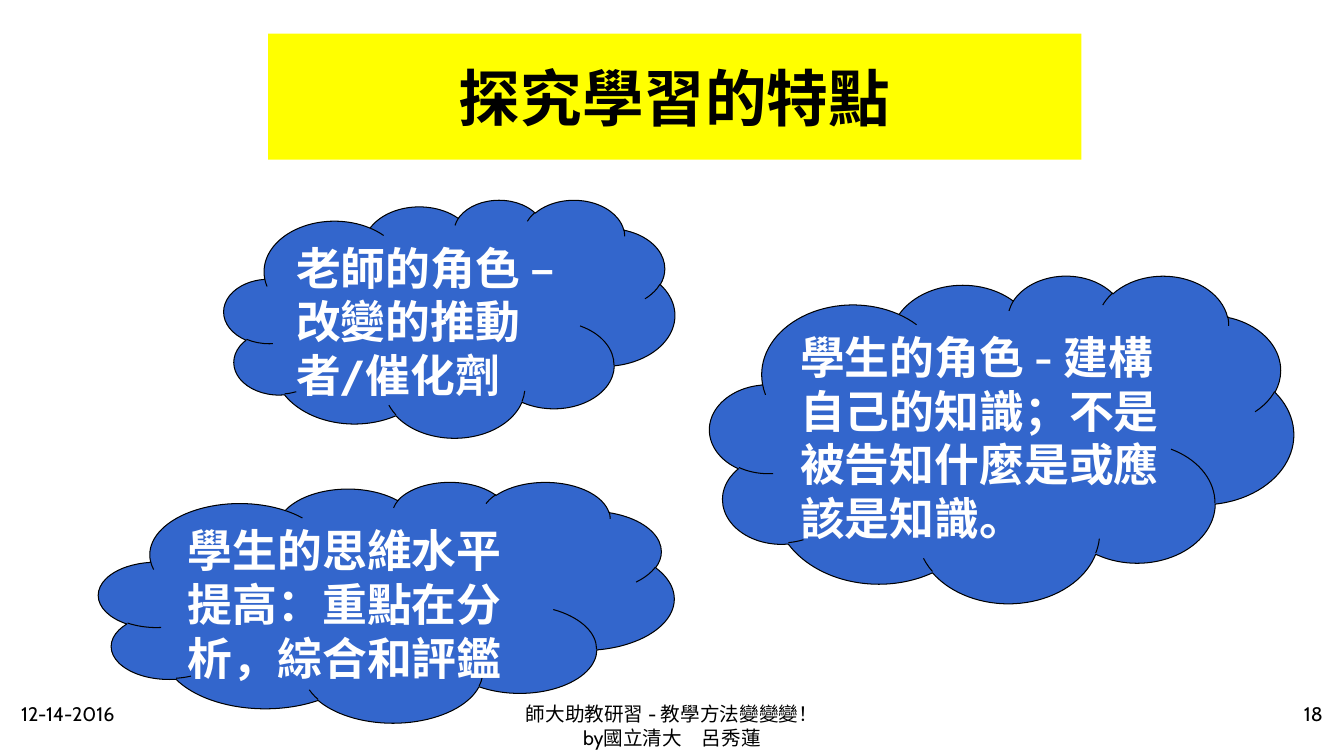
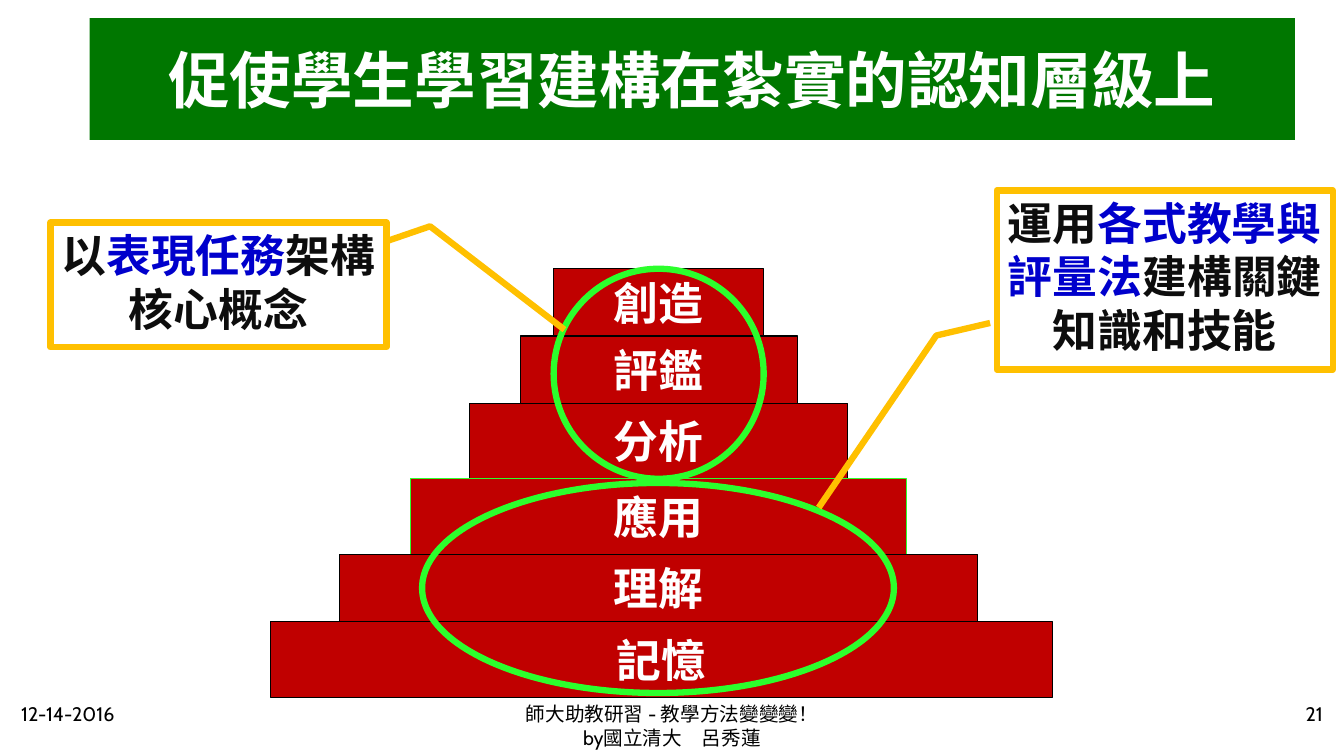
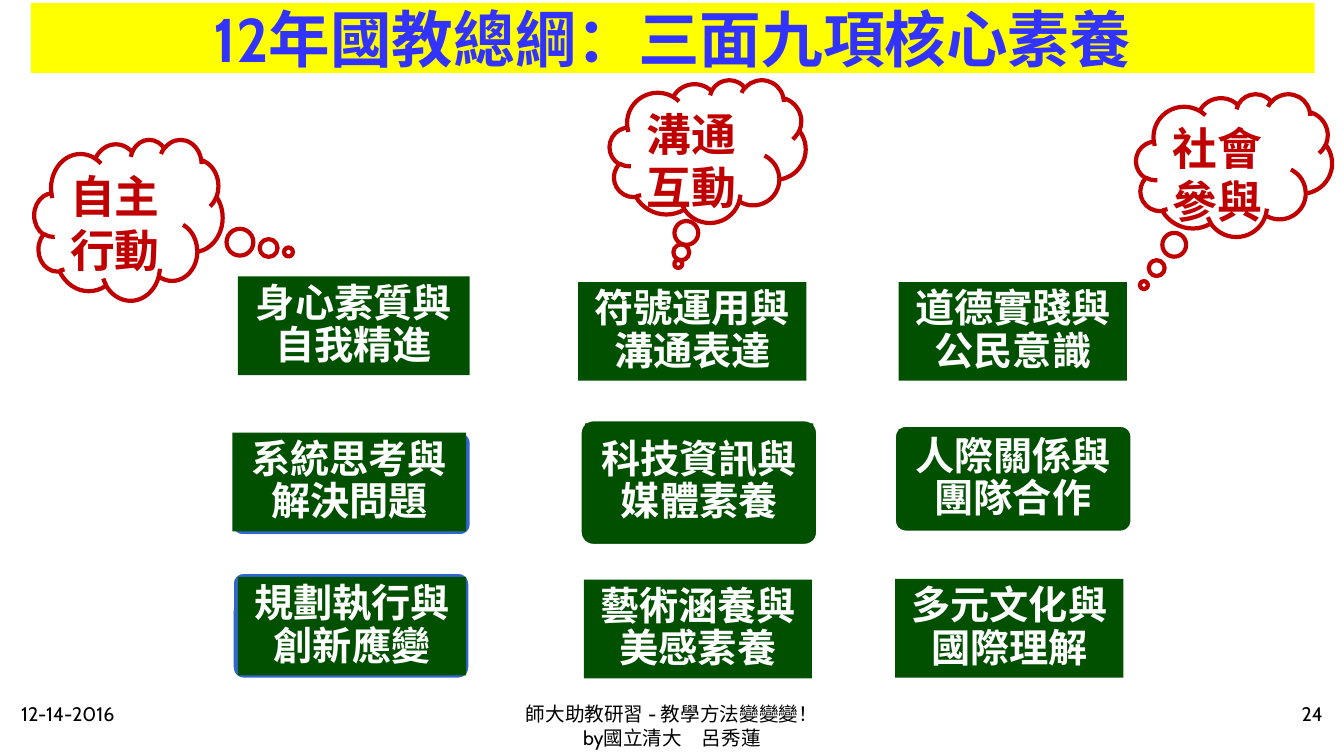
from lxml import etree
from pptx import Presentation
from pptx.dml.color import RGBColor
from pptx.enum.shapes import MSO_SHAPE
from pptx.enum.text import MSO_ANCHOR, MSO_AUTO_SIZE, PP_ALIGN
from pptx.oxml.ns import qn
from pptx.util import Pt

BLACK = RGBColor(0, 0, 0)
INK = RGBColor(0x0D, 0x0D, 0x0D)
WHITE = RGBColor(0xFF, 0xFF, 0xFF)
YELLOW = RGBColor(0xFF, 0xFF, 0x00)
GREEN = RGBColor(0x00, 0x77, 0x00)
DARK_GREEN = RGBColor(0x00, 0x50, 0x00)
LIME = RGBColor(0x2C, 0xFF, 0x2C)
BLUE = RGBColor(0x33, 0x66, 0xCC)
TITLE_BLUE = RGBColor(0x33, 0x33, 0xFF)
KEY_BLUE = RGBColor(0x00, 0x00, 0xCC)
RED = RGBColor(0xC0, 0x00, 0x00)
GOLD = RGBColor(0xFF, 0xC0, 0x00)

LATIN, CJK = "Cabin", "Noto Sans CJK TC"
LEFT, CENTER, RIGHT = PP_ALIGN.LEFT, PP_ALIGN.CENTER, PP_ALIGN.RIGHT
TOP, MIDDLE = MSO_ANCHOR.TOP, MSO_ANCHOR.MIDDLE


def points(box):
    return [Pt(v) for v in box]


def write(sp, *paragraphs, size=32, color=WHITE, bold=True, font=LATIN, align=CENTER,
          anchor=TOP, wrap=True, inset=None, spacing=None, first_indent=None):
    """Fill a shape; a paragraph is a string or a list of (text, colour) runs."""
    tf = sp.text_frame
    tf.auto_size = MSO_AUTO_SIZE.NONE
    tf.word_wrap = wrap
    tf.vertical_anchor = anchor
    if inset is not None:
        tf.margin_left = tf.margin_top = tf.margin_right = tf.margin_bottom = Pt(inset)
    for i, runs in enumerate(paragraphs):
        p = tf.add_paragraph() if i else tf.paragraphs[0]
        p.alignment = align
        if spacing:
            p.line_spacing = spacing
        if first_indent and i == 0:
            pPr = p._p.get_or_add_pPr()
            pPr.set("marL", "0")
            pPr.set("indent", str(Pt(first_indent)))
        for text, run_color in [(runs, color)] if isinstance(runs, str) else runs:
            r = p.add_run()
            r.text = text
            r.font.size, r.font.bold, r.font.name = Pt(size), bold, font
            r.font.color.rgb = run_color
            etree.SubElement(r.font._element, qn("a:ea")).set("typeface", CJK)


def add_shape(s, kind, box, fill=None, line=None, width=0.75, adj=()):
    sp = s.shapes.add_shape(kind, *points(box))
    sp.shadow.inherit = False
    if fill is None:
        sp.fill.background()
    else:
        sp.fill.solid()
        sp.fill.fore_color.rgb = fill
    if line is None:
        sp.line.fill.background()
    else:
        sp.line.color.rgb = line
        sp.line.width = Pt(width)
    for i, value in enumerate(adj):
        sp.adjustments[i] = value
    return sp


def add_footer(s, number):
    parts = [
        (8, 200, LEFT, ["12-14-2016"], None),
        (328, 304, CENTER, ["師大助教研習 - 教學方法變變變！", "by國立清大　呂秀蓮"], -57),
        (752, 200, RIGHT, [str(number)], None),
    ]
    for x, w, align, lines, indent in parts:
        tb = s.shapes.add_textbox(*points((x, 498, w, 36)))
        write(tb, *lines, size=14, color=BLACK, bold=False, align=align, first_indent=indent)


def new_slide(prs, title, box, fill, color, number, font=LATIN):
    s = prs.slides.add_slide(prs.slide_layouts[5])
    sp = s.shapes.title
    sp.left, sp.top, sp.width, sp.height = points(box)
    sp.fill.solid()
    sp.fill.fore_color.rgb = fill
    write(sp, title, size=44, color=color, font=font, anchor=MIDDLE)
    add_footer(s, number)
    return s


def add_cloud(s, box, text):
    sp = add_shape(s, MSO_SHAPE.CLOUD, box, BLUE, BLACK)
    write(sp, text, align=LEFT)


def add_pyramid(s, center, top, levels):
    """Stack centred steps downwards; a level is label, width, height, shift, outline."""
    for label, w, h, shift, line in levels:
        box = (center - w / 2 + shift, top, w, h)
        sp = add_shape(s, MSO_SHAPE.RECTANGLE, box, RED, line)
        write(sp, label, font="Calibri", anchor=MIDDLE, wrap=False)
        top += h


def add_callout(s, box, adj, before, key, after):
    sp = add_shape(s, MSO_SHAPE.LINE_CALLOUT_2, box, WHITE, GOLD, 4.5, adj)
    write(sp, [(before, INK), (key, KEY_BLUE), (after, INK)])


def add_card(s, box, text, frame=None, pads=()):
    """Draw a competency card, with a rounded frame that sticks out by pads (l, t, r, b)."""
    if frame is not None:
        x, y, w, h = box
        l, t, r, b = pads
        add_shape(s, MSO_SHAPE.ROUNDED_RECTANGLE, (x - l, y - t, w + l + r, h + t + b),
                  frame, WHITE, 1, [0.1])
    sp = add_shape(s, MSO_SHAPE.RECTANGLE, box, DARK_GREEN)
    write(sp, text, size=28, anchor=MIDDLE, inset=4.3, spacing=0.9)


def add_dimension(s, thought, box, adj, cards):
    for card in cards:
        add_card(s, *card)
    sp = add_shape(s, MSO_SHAPE.CLOUD_CALLOUT, box, None, RED, 3, adj)
    write(sp, thought, color=RED, align=LEFT)


def features_slide(prs):
    s = new_slide(prs, "探究學習的特點", (191.5, 24, 581, 90), YELLOW, BLACK, 18, CJK)
    add_cloud(s, (160, 142.5, 322, 170), "老師的角色 – 改變的推動者/催化劑")
    add_cloud(s, (507, 196.5, 417, 234),
              "學生的角色 - 建構自己的知識；不是被告知什麼是或應該是知識。")
    add_cloud(s, (70.5, 344, 411, 172), "學生的思維水平提高：重點在分析，綜合和評鑑")


def levels_slide(prs):
    s = new_slide(prs, "促使學生學習建構在紮實的認知層級上", (64, 13, 861, 87), GREEN, WHITE, 21)
    add_pyramid(s, 470.5, 192, [
        ("創造", 150, 48, 0, BLACK),
        ("評鑑", 198, 48, 0, BLACK),
        ("分析", 270, 54, 0, BLACK),
        ("應用", 354, 54, 0, LIME),
        ("理解", 456, 48, 0, BLACK),
        ("記憶", 558, 54, 2, BLACK),
    ])
    for ring in ((395.5, 192, 150, 150), (301.5, 345, 337, 150)):
        add_shape(s, MSO_SHAPE.OVAL, ring, None, LIME, 4.5)
    add_callout(s, (712, 136, 240, 128), (0.74, -0.02, 0.81, -0.18, 1.77, -0.53),
                "運用", "各式教學與評量法", "建構關鍵知識和技能")
    add_callout(s, (36, 159, 240, 89), (0.15, 1, 0.03, 1.13, 0.86, 1.53),
                "以", "表現任務", "架構核心概念")


def competencies_slide(prs):
    s = new_slide(prs, "12年國教總綱：三面九項核心素養", (22, 2, 917, 50),
                  YELLOW, TITLE_BLUE, 24)
    w, h = 163, 70.5
    add_dimension(s, "自主行動", (24.5, 99.5, 134.5, 115), (0.85, 0.2), [
        ((170, 197.5, 165.5, h), "身心素質與自我精進"),
        ((166, 309, 167, h), "系統思考與解決問題", BLUE, (0, 0, 3, 2.5)),
        ((170, 412, w, h), "規劃執行與創新應變", BLUE, (3.5, 2.5, 2, 2)),
    ])
    add_dimension(s, "溝通互動", (435.5, 57, 140, 102), (-0.15, 0.79), [
        ((413, 201.5, w, h), "符號運用與溝通表達"),
        ((418, 302.5, w, 83), "科技資訊與媒體素養", DARK_GREEN, (3, 2, 2.5, 3.5)),
        ((417, 414, w, h), "藝術涵養與美感素養"),
    ])
    add_dimension(s, "社會參與", (811.5, 67, 140, 102), (-0.46, 0.84), [
        ((642, 201.5, w, h), "道德實踐與公民意識"),
        ((642, 306.5, w, h), "人際關係與團隊合作", DARK_GREEN, (2.5, 2, 3, 2.5)),
        ((639.5, 413.5, w, h), "多元文化與國際理解"),
    ])


def main():
    prs = Presentation()
    prs.slide_width, prs.slide_height = Pt(960), Pt(540)
    features_slide(prs)
    levels_slide(prs)
    competencies_slide(prs)
    prs.save("out.pptx")


if __name__ == "__main__":
    main()
